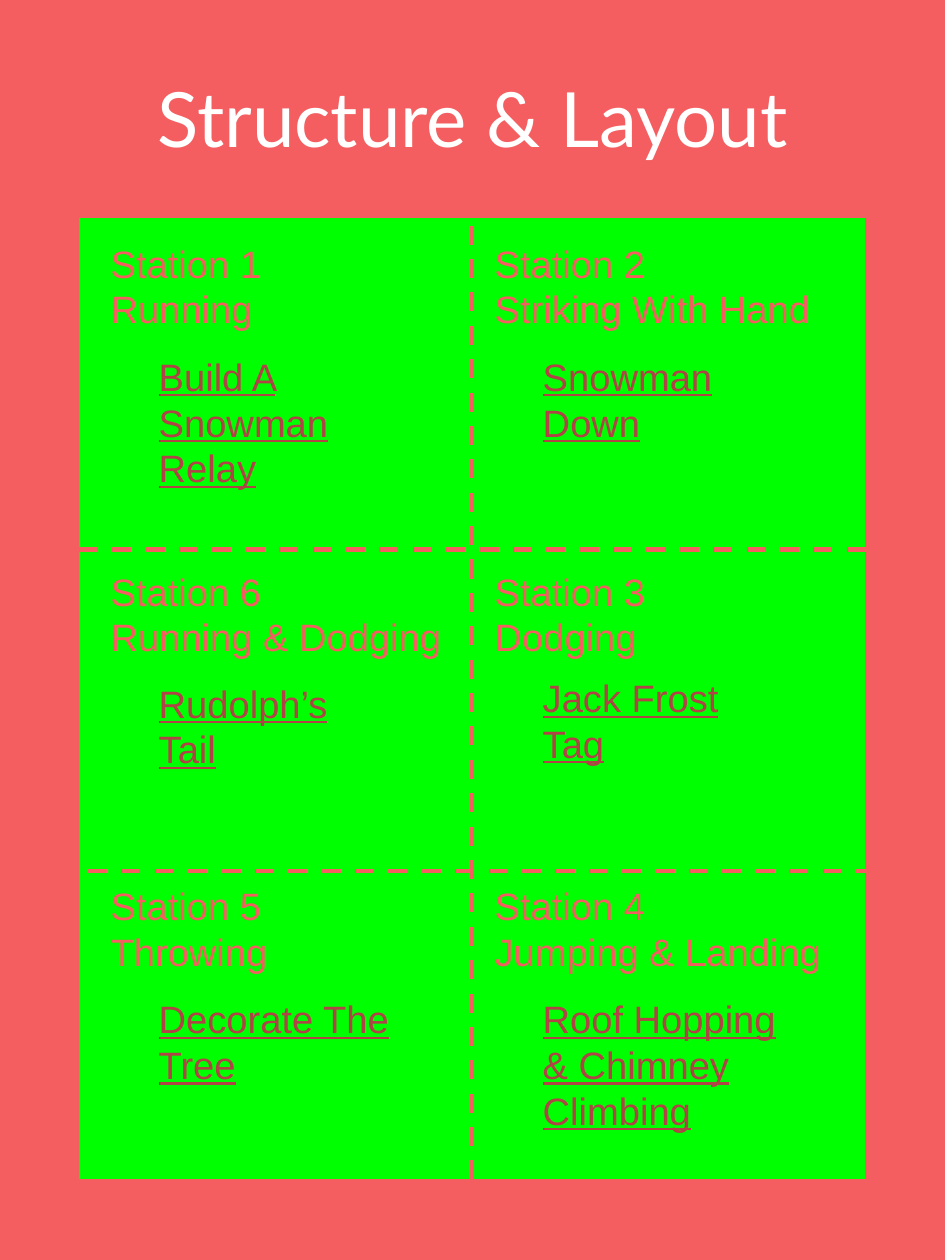
from lxml.etree import SubElement
from pptx import Presentation
from pptx.dml.color import RGBColor
from pptx.enum.dml import MSO_LINE
from pptx.enum.shapes import MSO_CONNECTOR, MSO_SHAPE
from pptx.enum.text import MSO_ANCHOR, PP_ALIGN
from pptx.oxml.ns import qn
from pptx.util import Cm, Inches, Pt

CORAL = "F55E61"
GREEN = "00FF00"
DARK_RED = "AF4345"
WHITE = "FFFFFF"

BOARD = (0.69, 1.9, 6.88, 8.42)
FIRST_ROW = 2.0
ROW_HEIGHT = 2.81
FIRST_COLUMN = 0.87
COLUMN_WIDTH = 3.36
HEADING_SIZE = (3.16, 0.99)
ACTIVITY_INDENT = 0.42
ACTIVITY_HEIGHT = 1.55

STATIONS = [
    (0, 0, "Station 1", "Running", "Build A Snowman Relay", 2.32, 0, 0),
    (1, 0, "Station 2", "Striking With Hand", "Snowman Down", 2.32, 0, 0),
    (1, 1, "Station 3", "Dodging", "Jack Frost Tag", 2.32, 0.06, 0),
    (1, 2, "Station 4", "Jumping & Landing", "Roof Hopping & Chimney Climbing", 2.46, 0, 0),
    (0, 2, "Station 5", "Throwing", "Decorate The Tree", 2.32, 0, 0),
    (0, 1, "Station 6", "Running & Dodging", "Rudolph’s Tail", 2.02, 0.06, 0.05),
]


def color(value):
    return RGBColor.from_string(value)


def set_margins(text_frame):
    text_frame.word_wrap = True
    text_frame.margin_left = text_frame.margin_right = Inches(0.1)
    text_frame.margin_top = text_frame.margin_bottom = Inches(0.1)


def add_run(paragraph, text, size, font_name, font_color, underline=None):
    run = paragraph.add_run()
    run.text = text
    run.font.size = Pt(size)
    run.font.name = font_name
    run.font.color.rgb = color(font_color)
    run.font.underline = underline


def add_title(slide, box, text):
    title = slide.shapes.title
    title.left, title.top, title.width, title.height = map(Inches, box)
    set_margins(title.text_frame)
    title.text_frame.vertical_anchor = MSO_ANCHOR.MIDDLE
    paragraph = title.text_frame.paragraphs[0]
    paragraph.alignment = PP_ALIGN.CENTER
    add_run(paragraph, text, 48, "Lato", WHITE)


def add_text(slide, box, lines, font_color, underline=None):
    text_frame = slide.shapes.add_textbox(*map(Inches, box)).text_frame
    set_margins(text_frame)
    for index, line in enumerate(lines):
        paragraph = text_frame.add_paragraph() if index else text_frame.paragraphs[0]
        add_run(paragraph, line, 24, "Arial", font_color, underline)


def add_divider(slide, start, end):
    divider = slide.shapes.add_connector(
        MSO_CONNECTOR.STRAIGHT, *map(Inches, (*start, *end)))
    divider.line.color.rgb = color(CORAL)
    divider.line.width = Pt(3)
    divider.line.dash_style = MSO_LINE.DASH
    SubElement(divider._element.spPr, qn("a:effectLst"))
    return divider


def add_board(slide, box):
    left, top, width, height = box
    board = slide.shapes.add_shape(MSO_SHAPE.RECTANGLE, *map(Inches, box))
    board.shadow.inherit = False
    board.fill.solid()
    board.fill.fore_color.rgb = color(GREEN)
    board.line.color.rgb = color(CORAL)
    board.line.width = Pt(0.75)
    for row, shift in ((1, 0), (2, 0.08)):
        y = FIRST_ROW + row * ROW_HEIGHT
        add_divider(slide, (left + shift, y), (left + width + shift, y))
    middle = left + width / 2
    center_line = add_divider(slide, (middle, top + height), (middle, top))
    center_line.begin_connect(board, 2)
    center_line.end_connect(board, 0)


def add_station(slide, left, top, name, skill, activity, activity_width,
                heading_shift, activity_shift):
    heading_width, heading_height = HEADING_SIZE
    add_text(slide, (left, top + heading_shift, heading_width, heading_height),
             [name, skill], CORAL)
    add_text(slide, (left + ACTIVITY_INDENT, top + heading_height + activity_shift,
                     activity_width, ACTIVITY_HEIGHT), [activity], DARK_RED, True)


def main():
    presentation = Presentation()
    presentation.slide_width = Cm(21)
    presentation.slide_height = Cm(28)
    slide = presentation.slides.add_slide(presentation.slide_layouts[5])
    slide.background.fill.solid()
    slide.background.fill.fore_color.rgb = color(CORAL)
    add_title(slide, (0.46, 0.39, 7.35, 1.27), "Structure & Layout")
    add_board(slide, BOARD)
    for column, row, *details in STATIONS:
        add_station(slide, FIRST_COLUMN + column * COLUMN_WIDTH,
                    FIRST_ROW + row * ROW_HEIGHT, *details)
    presentation.save("out.pptx")


if __name__ == "__main__":
    main()
